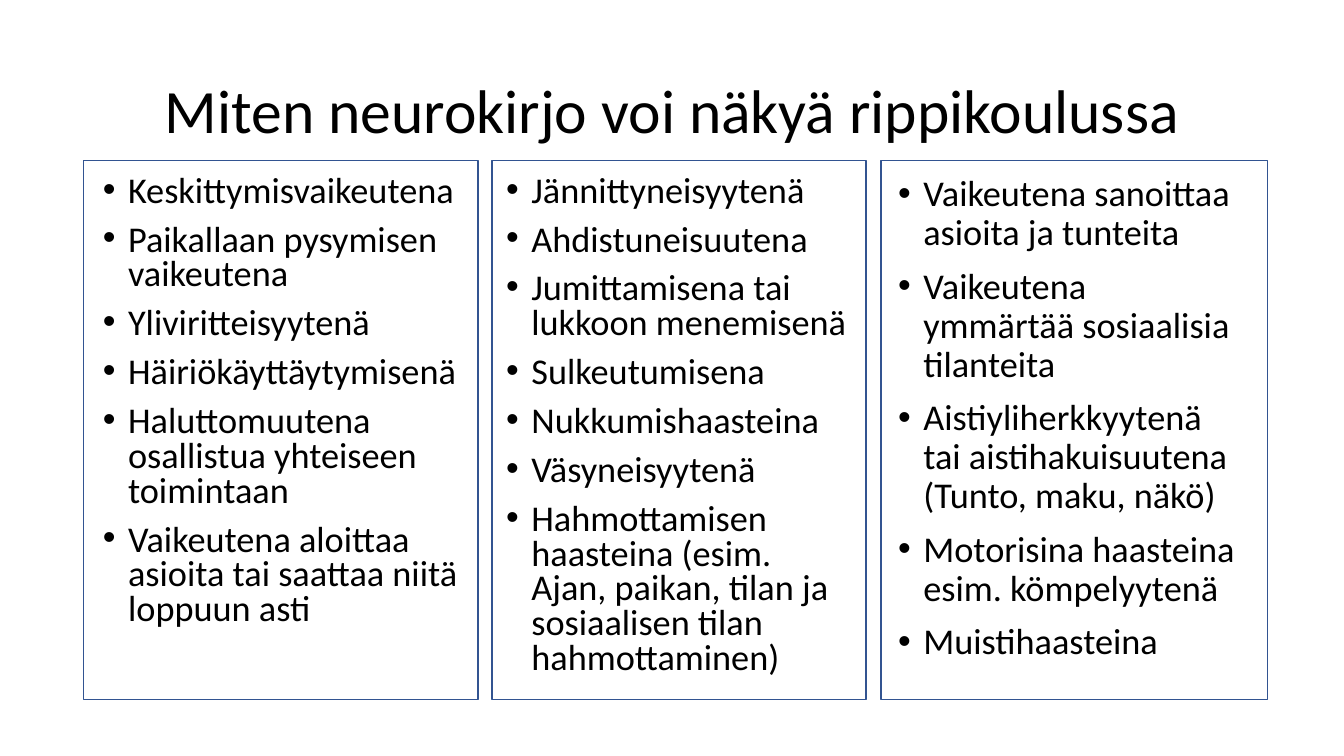
import pptx
import pptx.util
import pptx.dml.color
import pptx.enum.shapes
import pptx.enum.text
import pptx.oxml
import pptx.oxml.ns

Inches = pptx.util.Inches
COLORS = {"text": "000000", "frame": "325491"}

ATTENTION = [
    "Keskittymisvaikeutena",
    "Paikallaan pysymisen vaikeutena",
    "Yliviritteisyytenä",
    "Häiriökäyttäytymisenä",
    "Haluttomuutena osallistua yhteiseen toimintaan",
    "Vaikeutena aloittaa asioita tai saattaa niitä loppuun asti",
]
ANXIETY = [
    "Jännittyneisyytenä",
    "Ahdistuneisuutena",
    "Jumittamisena tai lukkoon menemisenä",
    "Sulkeutumisena",
    "Nukkumishaasteina",
    "Väsyneisyytenä",
    "Hahmottamisen haasteina (esim. Ajan, paikan, tilan ja sosiaalisen tilan hahmottaminen)",
]
SENSES = [
    "Vaikeutena sanoittaa asioita ja tunteita",
    "Vaikeutena ymmärtää sosiaalisia tilanteita",
    "Aistiyliherkkyytenä tai aistihakuisuutena (Tunto, maku, näkö)",
    "Motorisina haasteina esim. kömpelyytenä",
    "Muistihaasteina",
]


def apply(target, values):
    for attribute, value in values.items():
        setattr(target, attribute, value)


class SlideBuilder:
    font_name = "Calibri"

    def __init__(self, slide):
        self.slide = slide

    def color(self, key):
        return pptx.dml.color.RGBColor.from_string(COLORS[key])

    def place(self, holder, box):
        apply(holder, dict(zip(("left", "top", "width", "height"), map(Inches, box))))

    def fill_text(self, holder, lines, size, frame_format, paragraph_format):
        frame = holder.text_frame
        frame.text = "\n".join(lines)
        apply(frame, {
            "word_wrap": True,
            "auto_size": pptx.enum.text.MSO_AUTO_SIZE.NONE,
            **frame_format,
        })
        for paragraph in frame.paragraphs:
            apply(paragraph, paragraph_format)
            font = paragraph.runs[0].font
            apply(font, {"name": self.font_name, "size": pptx.util.Pt(size)})
            font.color.rgb = self.color("text")

    def title(self, text, box):
        heading = self.slide.shapes.title
        self.place(heading, box)
        self.fill_text(
            heading, [text], 44,
            {"vertical_anchor": pptx.enum.text.MSO_ANCHOR.MIDDLE},
            {"alignment": pptx.enum.text.PP_ALIGN.CENTER, "line_spacing": 0.9},
        )

    def bullets(self, holder, items, box, line_spacing):
        self.place(holder, box)
        self.fill_text(
            holder, items, 25.9,
            {"vertical_anchor": pptx.enum.text.MSO_ANCHOR.TOP},
            {
                "alignment": pptx.enum.text.PP_ALIGN.LEFT,
                "line_spacing": line_spacing,
                "space_before": pptx.util.Pt(10),
            },
        )
        for paragraph in holder.text_frame.paragraphs:
            properties = paragraph._p.get_or_add_pPr()
            properties.set("marL", str(Inches(0.25)))
            properties.set("indent", str(Inches(-0.25)))
            for tag, name, value in (("buFont", "typeface", "Arial"), ("buChar", "char", "•")):
                bullet = pptx.oxml.parse_xml(f'<a:{tag} {pptx.oxml.ns.nsdecls("a")} {name}="{value}"/>')
                properties.append(bullet)

    def placeholder_list(self, index, items, box):
        self.bullets(self.slide.placeholders[index], items, box, 0.8)

    def text_list(self, items, box):
        holder = self.slide.shapes.add_textbox(*map(Inches, box))
        self.bullets(holder, items, box, 0.9)

    def frame(self, left, width):
        outline = self.slide.shapes.add_shape(
            pptx.enum.shapes.MSO_SHAPE.RECTANGLE,
            *map(Inches, (left, 1.59, width, 5.35)),
        )
        outline.shadow.inherit = False
        outline.fill.background()
        outline.line.color.rgb = self.color("frame")
        outline.line.width = pptx.util.Pt(1)


def main():
    deck = pptx.Presentation()
    apply(deck, {"slide_width": Inches(13.33), "slide_height": Inches(7.5)})
    builder = SlideBuilder(deck.slides.add_slide(deck.slide_layouts[3]))
    builder.title("Miten neurokirjo voi näkyä rippikoulussa", (0.92, 0.4, 11.5, 1.45))
    builder.placeholder_list(1, ATTENTION, (0.92, 1.69, 4, 5.16))
    builder.placeholder_list(2, ANXIETY, (4.92, 1.69, 3.6, 5.25))
    builder.text_list(SENSES, (8.81, 1.69, 3.6, 5.39))
    for left, width in ((0.83, 3.91), (4.88, 3.71), (8.74, 3.83)):
        builder.frame(left, width)
    deck.save("out.pptx")


if __name__ == "__main__":
    main()
